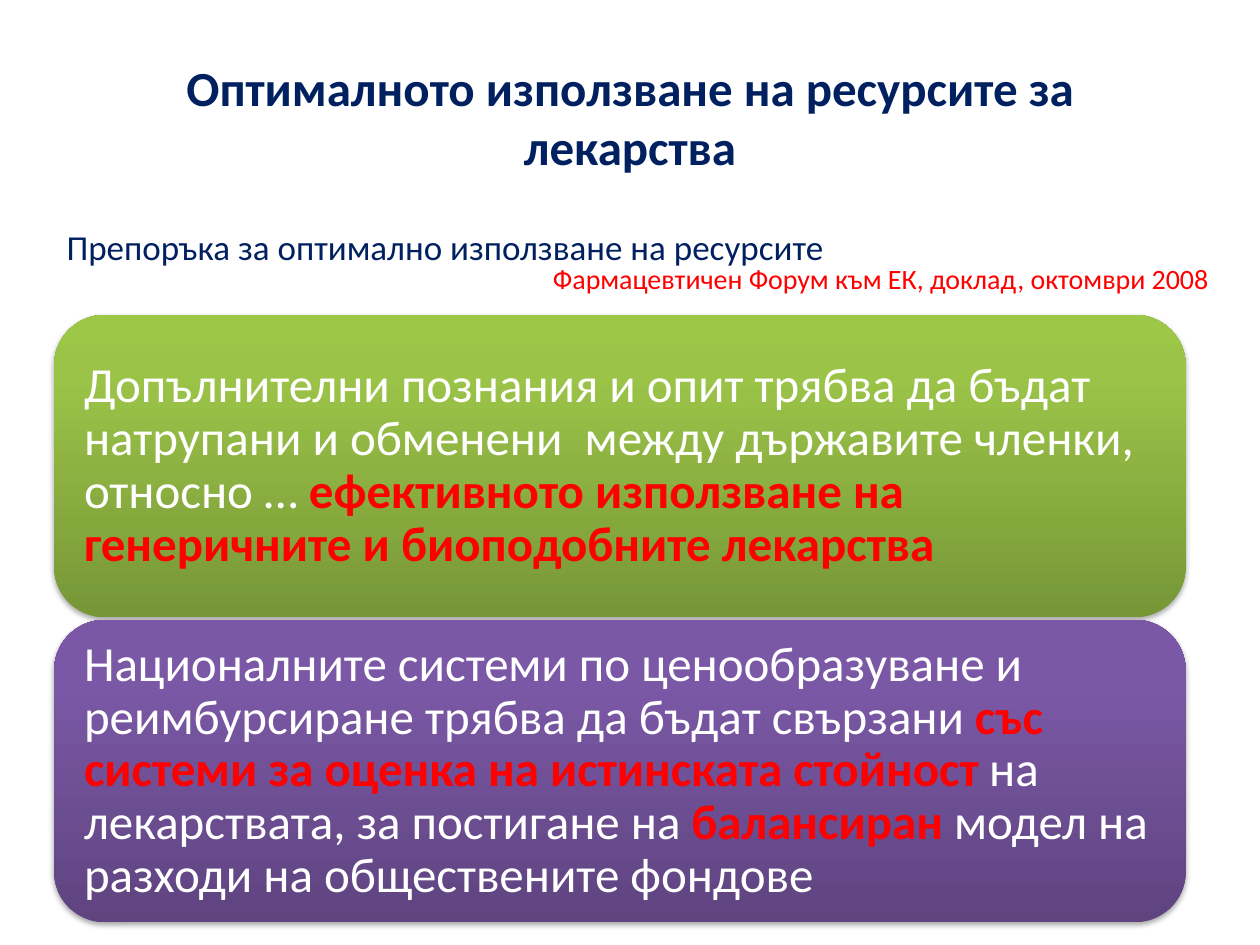
from lxml.etree import SubElement
from pptx import Presentation
from pptx.dml.color import RGBColor
from pptx.enum.shapes import MSO_SHAPE
from pptx.enum.text import MSO_ANCHOR, PP_ALIGN
from pptx.oxml.ns import qn
from pptx.util import Inches, Pt

NAVY = RGBColor(0x00, 0x20, 0x60)
RED = RGBColor(0xFF, 0x00, 0x00)
WHITE = RGBColor(0xFF, 0xFF, 0xFF)
BLACK = RGBColor(0x00, 0x00, 0x00)
GREEN_STOPS = [(0, RGBColor(0x77, 0x97, 0x37)), (80, RGBColor(0x9B, 0xC3, 0x48)),
               (100, RGBColor(0x9D, 0xC7, 0x46))]
PURPLE_STOPS = [(0, RGBColor(0x5F, 0x44, 0x80)), (80, RGBColor(0x7B, 0x58, 0xA6)),
                (100, RGBColor(0x7C, 0x57, 0xA8))]

TITLE = "Оптималното използване на ресурсите за лекарства"
SUBTITLE = "Препоръка за оптимално използване на ресурсите"
CITATION = "Фармацевтичен Форум към ЕК, доклад, октомври 2008"

# Each card: gradient stops and runs of (text, emphasised)
CARDS = [
    (GREEN_STOPS, [
        ("Допълнителни познания и опит трябва да бъдат натрупани и обменени  "
         "между държавите членки, относно … ", False),
        ("ефективното използване на генеричните и биоподобните лекарства", True),
    ]),
    (PURPLE_STOPS, [
        ("Националните системи по ценообразуване и реимбурсиране трябва да бъдат "
         "свързани ", False),
        ("със системи за оценка на истинската стойност ", True),
        ("на лекарствата, за постигане на ", False),
        ("балансиран", True),
        (" модел на разходи на обществените фондове", False),
    ]),
]
CARD_LEFT, CARD_TOP, CARD_WIDTH, CARD_HEIGHT = 0.43, 2.5, 8.98, 2.4
CARD_PITCH = 2.42
CARD_INSET = 0.12


def add_run(paragraph, text, size=28, color=NAVY, bold=False):
    run = paragraph.add_run()
    run.text = text
    run.font.name = "Calibri"
    run.font.size = Pt(size)
    run.font.bold = bold
    run.font.color.rgb = color


def add_text(slide, text, left, top, width, height, align=PP_ALIGN.LEFT,
             anchor=MSO_ANCHOR.TOP, **font):
    box = slide.shapes.add_textbox(*map(Inches, (left, top, width, height)))
    frame = box.text_frame
    frame.word_wrap = True
    frame.vertical_anchor = anchor
    paragraph = frame.paragraphs[0]
    paragraph.alignment = align
    add_run(paragraph, text, **font)


def set_gradient(shape, stops):
    """Fill the shape from bottom to top with (percent, colour) stops."""
    shape.fill.gradient()
    shape.fill.gradient_angle = 90
    stop_list = shape.fill._fill._gradFill.find(qn("a:gsLst"))
    for stop in list(stop_list):
        stop_list.remove(stop)
    for percent, color in stops:
        stop = SubElement(stop_list, qn("a:gs"), pos=str(percent * 1000))
        SubElement(stop, qn("a:srgbClr"), val=str(color))


def set_shadow(shape):
    """Give the shape a soft shadow straight below it."""
    shape.shadow.inherit = False
    effects = shape._element.spPr.find(qn("a:effectLst"))
    shadow = SubElement(effects, qn("a:outerShdw"), blurRad=str(Pt(3.1)),
                        dist=str(Pt(1.8)), dir="5400000", rotWithShape="0")
    color = SubElement(shadow, qn("a:srgbClr"), val=str(BLACK))
    SubElement(color, qn("a:alpha"), val="35000")


def add_card(slide, top, stops, runs):
    card = slide.shapes.add_shape(
        MSO_SHAPE.ROUNDED_RECTANGLE,
        *map(Inches, (CARD_LEFT, top, CARD_WIDTH, CARD_HEIGHT)))
    set_gradient(card, stops)
    card.line.fill.background()
    set_shadow(card)
    frame = card.text_frame
    frame.word_wrap = True
    frame.vertical_anchor = MSO_ANCHOR.MIDDLE
    frame.margin_left = frame.margin_right = Inches(CARD_INSET)
    frame.margin_top = frame.margin_bottom = Inches(CARD_INSET)
    paragraph = frame.paragraphs[0]
    paragraph.alignment = PP_ALIGN.LEFT
    paragraph.line_spacing = 0.9
    for text, emphasised in runs:
        add_run(paragraph, text, color=RED if emphasised else WHITE, bold=emphasised)


def main():
    presentation = Presentation()
    presentation.slide_width = Inches(10)
    presentation.slide_height = Inches(7.5)
    slide = presentation.slides.add_slide(presentation.slide_layouts[6])

    add_text(slide, TITLE, 1.38, 0.3, 7.24, 1.25, align=PP_ALIGN.CENTER,
             anchor=MSO_ANCHOR.MIDDLE, bold=True)
    add_text(slide, SUBTITLE, 0.43, 1.74, 6.71, 0.44, size=20)
    add_text(slide, CITATION, 4.29, 2.03, 5.71, 0.37, size=16, color=RED)
    for index, (stops, runs) in enumerate(CARDS):
        add_card(slide, CARD_TOP + index * CARD_PITCH, stops, runs)

    presentation.save("out.pptx")


if __name__ == "__main__":
    main()
